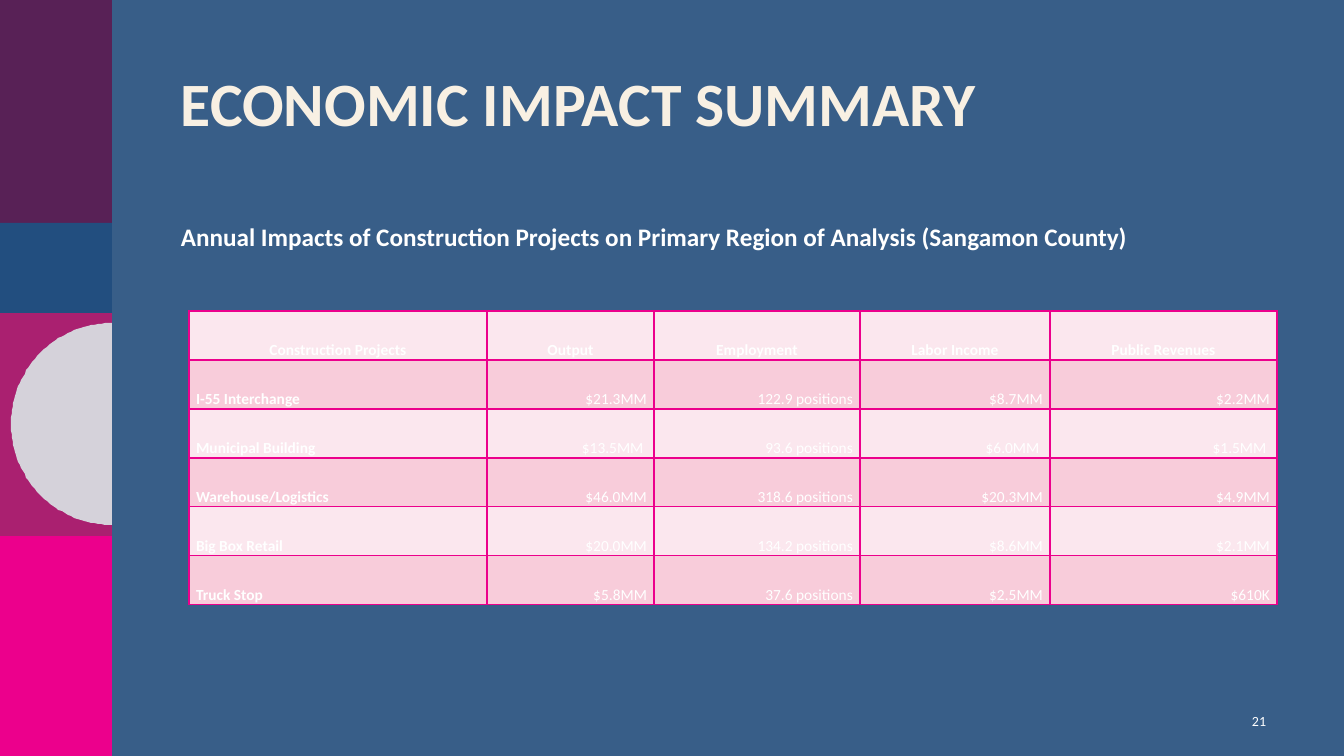
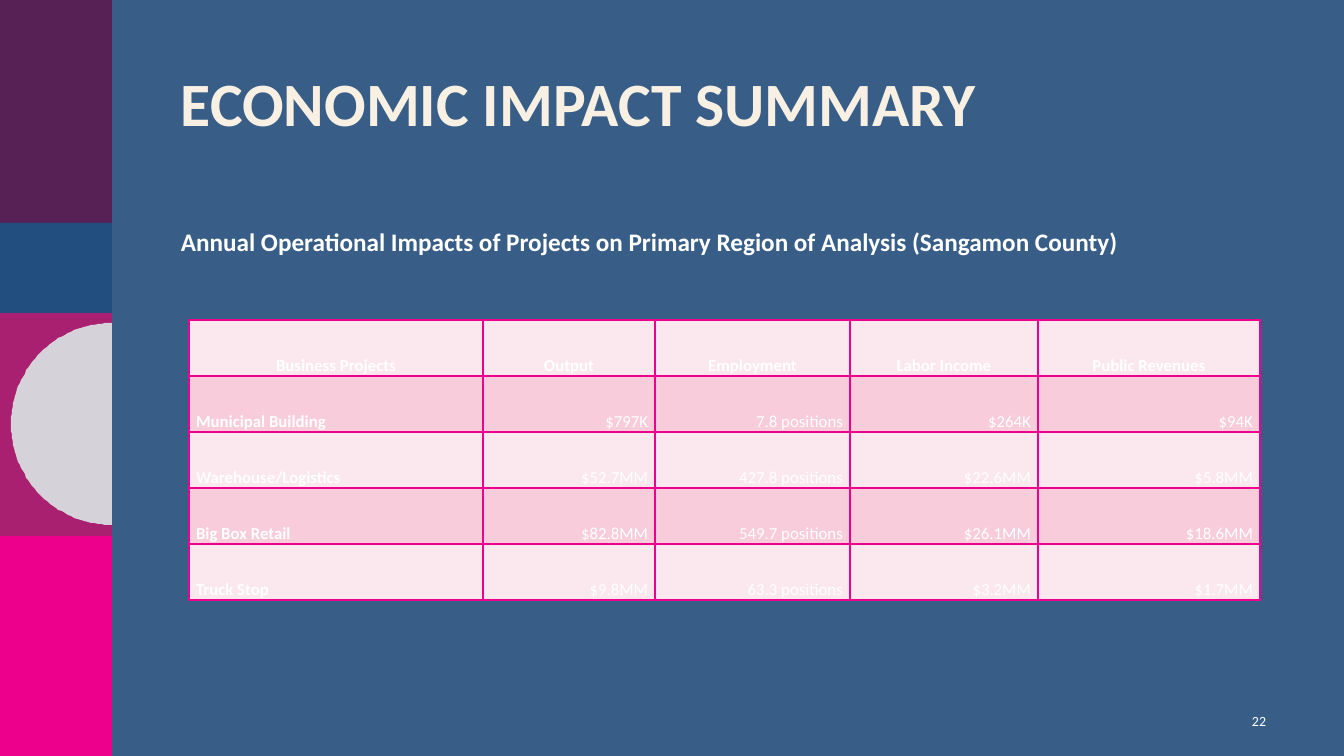
import math

from lxml import etree
from pptx import Presentation
from pptx import util as u
from pptx.dml.color import RGBColor
from pptx.enum import shapes, text
from pptx.oxml.ns import qn

PX = 914400 / 100.8  # EMU in one px
FONT = "Calibri"
WHITE, CREAM, BLUE, PINK = "FFFFFF", "F8F0E3", "385E88", "EC008C"
DISC = "D5D2DA"
ROW_FILLS = ["FBE7EE", "F8CCDA"]
LEFT, CENTER, RIGHT = text.PP_ALIGN.LEFT, text.PP_ALIGN.CENTER, text.PP_ALIGN.RIGHT
TOP, MIDDLE = text.MSO_ANCHOR.TOP, text.MSO_ANCHOR.MIDDLE

# Side bands: top, height, colour
BAND_WIDTH = 112
BANDS = [(532, 224, PINK), (313, 223, "AA2070"), (0, 224, "582156"), (223, 90, "224E7F")]

CONSTRUCTION = [
    ["Construction Projects", "Output", "Employment", "Labor Income", "Public Revenues"],
    ["I-55 Interchange", "$21.3MM", "122.9 positions", "$8.7MM", "$2.2MM"],
    ["Municipal Building", "$13.5MM ", "93.6 positions", "$6.0MM ", "$1.5MM "],
    ["Warehouse/Logistics", "$46.0MM", "318.6 positions", "$20.3MM", "$4.9MM"],
    ["Big Box Retail", "$20.0MM", "134.2 positions", "$8.6MM", "$2.1MM"],
    ["Truck Stop", "$5.8MM", "37.6 positions", "$2.5MM", "$610K"],
]
OPERATIONS = [
    ["Business Projects", "Output", "Employment", "Labor Income", "Public Revenues"],
    ["Municipal Building", "$797K", "7.8 positions", "$264K", "$94K"],
    ["Warehouse/Logistics", "$52.7MM", "427.8 positions", "$22.6MM", "$5.8MM"],
    ["Big Box Retail", "$82.8MM", "549.7 positions", "$26.1MM", "$18.6MM"],
    ["Truck Stop", "$9.8MM", "63.3 positions", "$3.2MM", "$1.7MM"],
]


def px(n):
    return u.Emu(round(n * PX))


def rgb(color):
    return RGBColor.from_string(color)


def write(tf, words, size, color=WHITE, bold=False, align=LEFT, spacing=None, after=None):
    p = tf.paragraphs[0]
    p.alignment = align
    if spacing is not None:
        p.line_spacing = spacing
    if after is not None:
        p.space_after = u.Pt(after)
    r = p.add_run()
    r.text = words
    r.font.name, r.font.size, r.font.bold = FONT, u.Pt(size), bold
    r.font.color.rgb = rgb(color)


def add_text(s, box, words, size, anchor=TOP, **fmt):
    tf = s.shapes.add_textbox(*map(px, box)).text_frame
    tf.word_wrap = True
    tf.vertical_anchor = anchor
    write(tf, words, size, **fmt)


def paint(sp, color):
    sp.shadow.inherit = False
    sp.fill.solid()
    sp.fill.fore_color.rgb = rgb(color)
    sp.line.fill.background()


def add_half_disc(s, cx, cy, radius):
    """Left half of a disc, its straight side at cx."""
    angles = [math.radians(a) for a in range(90, 271, 2)]
    points = [(cx + radius * math.cos(a), cy + radius * math.sin(a)) for a in angles]
    fb = s.shapes.build_freeform(*points[0], scale=PX)
    fb.add_line_segments(points[1:], close=True)
    paint(fb.convert_to_shape(), DISC)


def add_side_bands(s):
    for top, height, color in BANDS:
        sp = s.shapes.add_shape(shapes.MSO_SHAPE.RECTANGLE,
                                *map(px, (0, top, BAND_WIDTH, height)))
        paint(sp, color)
    add_half_disc(s, BAND_WIDTH, 424, 101)


def add_borders(cell):
    tc_pr = cell._tc.get_or_add_tcPr()
    for side in ("lnL", "lnR", "lnT", "lnB"):
        ln = etree.SubElement(tc_pr, qn(f"a:{side}"), w=str(u.Pt(1)))
        fill = etree.SubElement(ln, qn("a:solidFill"))
        etree.SubElement(fill, qn("a:srgbClr"), val=PINK)


def add_impact_table(s, top, widths, row_height, rows, size):
    box = (189, top, sum(widths), row_height * len(rows))
    table = s.shapes.add_table(len(rows), len(widths), *map(px, box)).table
    table.first_row = table.horz_banding = False
    for col, width in zip(table.columns, widths):
        col.width = px(width)
    for i, values in enumerate(rows):
        table.rows[i].height = px(row_height)
        for j, value in enumerate(values):
            cell = table.cell(i, j)
            add_borders(cell)
            cell.fill.solid()
            cell.fill.fore_color.rgb = rgb(ROW_FILLS[i % 2])
            cell.margin_left = cell.margin_right = px(7)
            cell.margin_top = cell.margin_bottom = 0
            cell.vertical_anchor = text.MSO_ANCHOR.BOTTOM
            align = CENTER if i == 0 else LEFT if j == 0 else RIGHT
            write(cell.text_frame, value, size, bold=i == 0 or j == 0,
                  align=align, spacing=1.15)


def add_summary_slide(prs, number, subtitle, subtitle_box, **table):
    s = prs.slides.add_slide(prs.slide_layouts[6])
    add_side_bands(s)
    add_text(s, (171, 68, 1088, 150), "ECONOMIC IMPACT SUMMARY", 44,
             color=CREAM, bold=True, spacing=0.9)
    add_text(s, subtitle_box, subtitle, 18, bold=True, after=6)
    add_impact_table(s, **table)
    add_text(s, (1226, 701, 50, 40), str(number), 10, anchor=MIDDLE, align=RIGHT)


def main():
    prs = Presentation()
    prs.slide_width, prs.slide_height = px(1344), px(756)
    background = prs.slide_master.background.fill
    background.solid()
    background.fore_color.rgb = rgb(BLUE)

    # Construction impacts
    add_summary_slide(
        prs, 21,
        "Annual Impacts of Construction Projects on Primary Region of Analysis (Sangamon County)",
        (171, 216, 1049, 42),
        top=311, widths=[298, 167, 206, 190, 227], row_height=49,
        rows=CONSTRUCTION, size=11)

    # Operational impacts
    add_summary_slide(
        prs, 22,
        "Annual Operational Impacts of Projects on Primary Region of Analysis (Sangamon County)",
        (171, 221, 1042, 468),
        top=320, widths=[294, 172, 195, 188, 222], row_height=56,
        rows=OPERATIONS, size=12)

    prs.save("out.pptx")


if __name__ == "__main__":
    main()
